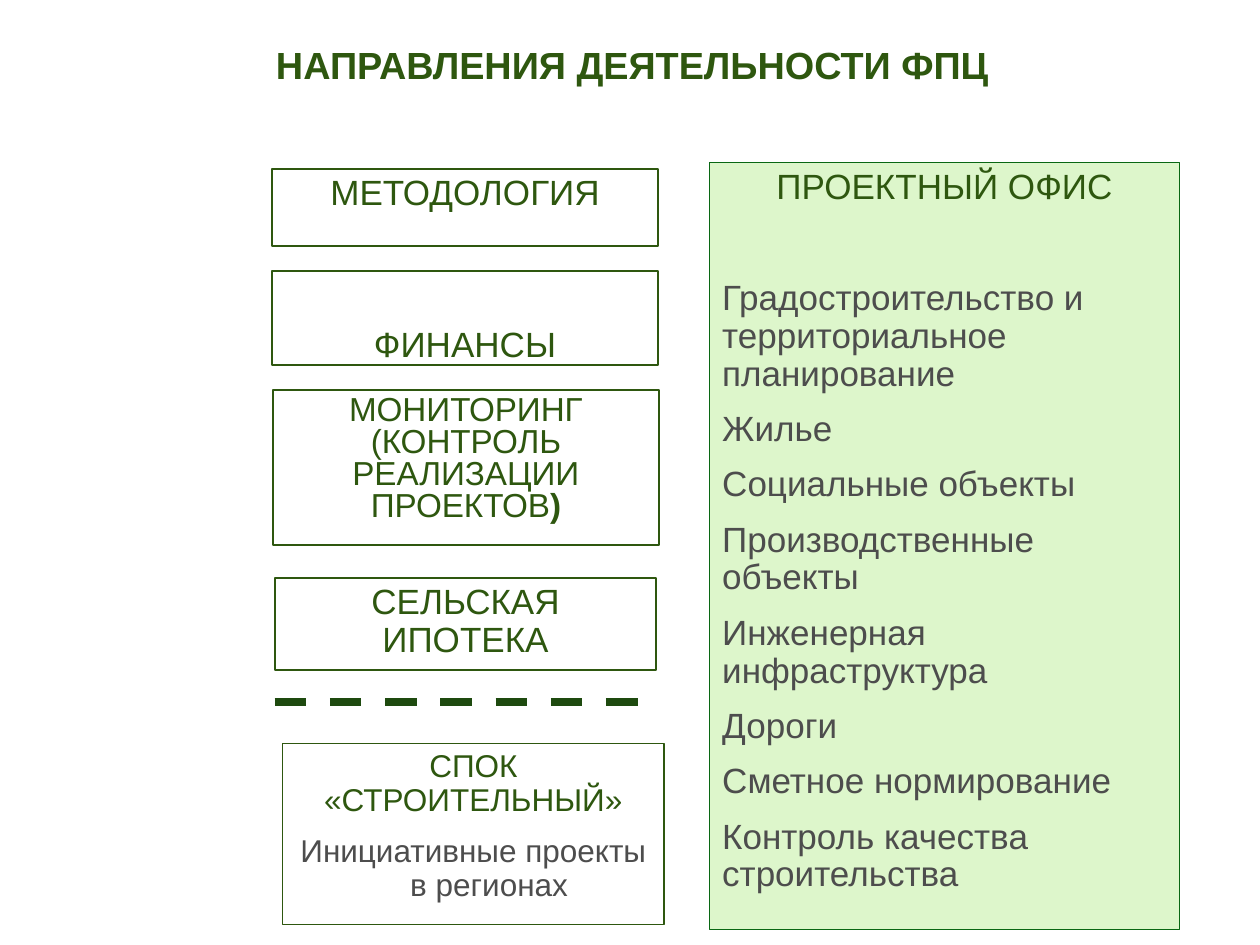
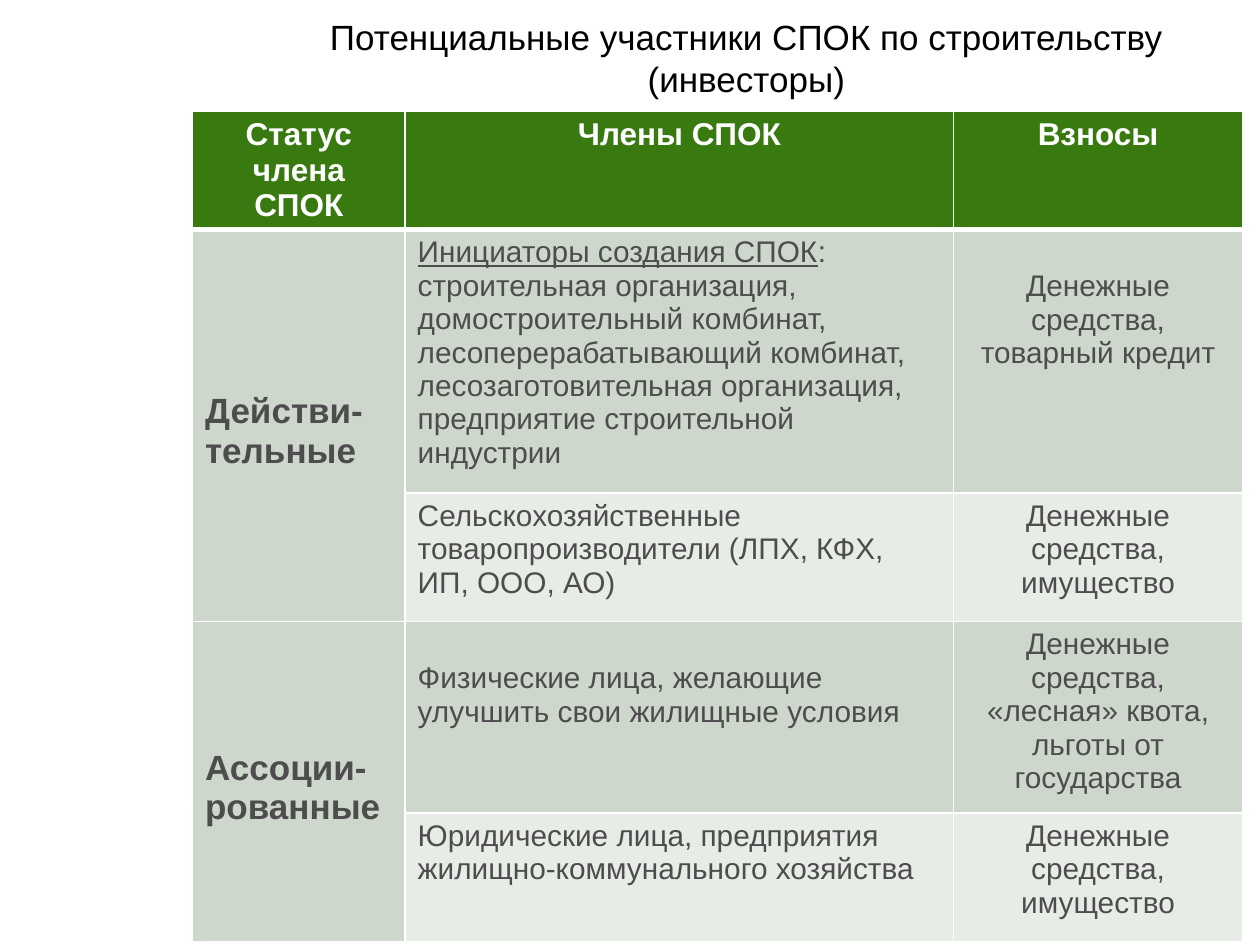
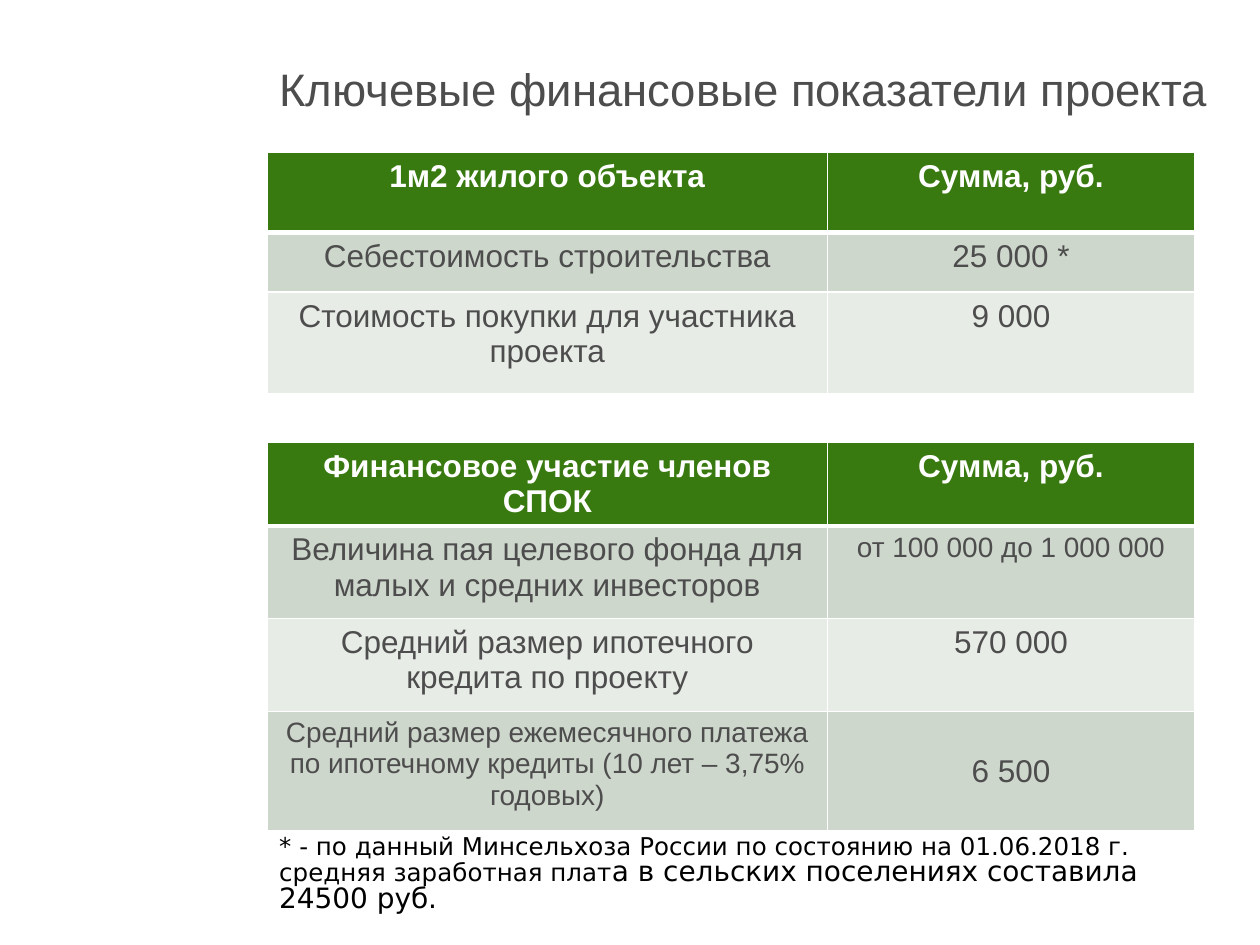
from dataclasses import dataclass

from lxml.etree import SubElement
from pptx import Presentation
from pptx.dml.color import RGBColor
from pptx.enum.dml import MSO_LINE
from pptx.enum.shapes import MSO_CONNECTOR, MSO_SHAPE
from pptx.enum.text import MSO_ANCHOR, MSO_AUTO_SIZE, PP_ALIGN
from pptx.oxml.ns import qn
from pptx.util import Pt


@dataclass(frozen=True)
class Theme:
    font: str = "Arial"
    plain: str = "DejaVu Sans"
    green: str = "2E570F"
    dark: str = "1E4A0F"
    edge: str = "096713"
    pale: str = "DDF6CB"
    head: str = "397A10"
    bands: tuple = ("CED7CC", "E8ECE7")
    gray: str = "4D4D4D"
    black: str = "000000"
    white: str = "FFFFFF"
    big: float = 26
    lead: float = 21.6
    body: float = 20
    tight: float = 19
    mid: float = 18
    cell: float = 17
    small: float = 16
    note: float = 14


THEME = Theme()
LEFT, MID = PP_ALIGN.LEFT, PP_ALIGN.CENTER


def paint(fill, color):
    fill.solid()
    fill.fore_color.rgb = RGBColor.from_string(color)


def write(frame, text, size=THEME.body, color=THEME.gray, font=THEME.font,
          bold=False, align=LEFT, lines=None, before=0, hang=0):
    first = frame.paragraphs[0]
    para = frame.add_paragraph() if first.runs else first
    props = para._p.get_or_add_pPr()
    props.set("marL", str(Pt(hang)))
    props.set("indent", str(-Pt(hang)))
    SubElement(props, qn("a:buNone"))
    para.alignment = align
    para.space_before = Pt(before)
    if lines:
        para.line_spacing = lines
    parts = [(text, {})] if isinstance(text, str) else text
    for words, style in parts:
        run = para.add_run()
        run.text = words
        face = run.font
        face.name = font
        face.size = Pt(style.get("size", size))
        face.bold = style.get("bold", bold)
        face.underline = style.get("under")
        face.color.rgb = RGBColor.from_string(color)


class Deck:
    def __init__(self, theme):
        self.theme = theme
        self.show = Presentation()
        self.show.slide_width, self.show.slide_height = Pt(720), Pt(540)
        self.slide = None

    def place(self, shape, area):
        shape.left, shape.top, shape.width, shape.height = map(Pt, area)
        frame = shape.text_frame
        frame.word_wrap = True
        frame.auto_size = MSO_AUTO_SIZE.NONE
        return frame

    def start(self, title, area, layout=5, **fmt):
        self.slide = self.show.slides.add_slide(self.show.slide_layouts[layout])
        frame = self.place(self.slide.shapes.title, area)
        frame.vertical_anchor = MSO_ANCHOR.MIDDLE
        write(frame, title, **fmt)

    def list(self, head, items, area):
        theme = self.theme
        shape = self.slide.placeholders[1]
        frame = self.place(shape, area)
        paint(shape.fill, theme.pale)
        paint(shape.line.fill, theme.edge)
        shape.line.width = Pt(0.75)
        write(frame, head, color=theme.green, align=MID, lines=0.9)
        for row, item in enumerate(items):
            write(frame, item, lines=0.9, before=10 if row else 42)

    def box(self, text, area, fill=THEME.white, width=1, low=False, **fmt):
        theme = self.theme
        shape = self.slide.shapes.add_shape(MSO_SHAPE.RECTANGLE, *map(Pt, area))
        shape.shadow.inherit = False
        if fill:
            paint(shape.fill, fill)
        else:
            shape.fill.background()
        paint(shape.line.fill, theme.green)
        shape.line.width = Pt(width)
        frame = self.place(shape, area)
        frame.vertical_anchor = MSO_ANCHOR.BOTTOM if low else MSO_ANCHOR.TOP
        if low:
            frame.margin_bottom = 0
        write(frame, text, **{"color": theme.green, "align": MID, "lines": 0.9, **fmt})
        return frame

    def dash(self, left, right, top):
        line = self.slide.shapes.add_connector(
            MSO_CONNECTOR.STRAIGHT, Pt(left), Pt(top), Pt(right), Pt(top))
        paint(line.line.fill, self.theme.dark)
        line.line.width = Pt(4.5)
        line.line.dash_style = MSO_LINE.DASH
        SubElement(line._element.spPr, qn("a:effectLst"))

    def note(self, text, area, **fmt):
        box = self.slide.shapes.add_textbox(*map(Pt, area))
        write(self.place(box, area), text, **fmt)

    def edges(self, cell, base):
        props = cell._tc.get_or_add_tcPr()
        for at, side in enumerate(("lnL", "lnR", "lnT", "lnB")):
            width = base if side == "lnB" else 1
            line = SubElement(props, qn("a:" + side), w=str(Pt(width)))
            fill = SubElement(line, qn("a:solidFill"))
            SubElement(fill, qn("a:srgbClr"), val=self.theme.white)
            props.insert(at, line)

    def table(self, left, top, cols, rows, data, styles):
        theme = self.theme
        grid = self.slide.shapes.add_table(
            len(rows), len(cols), Pt(left), Pt(top), Pt(sum(cols)), Pt(sum(rows))).table
        for col, width in zip(grid.columns, cols):
            col.width = Pt(width)
        for row, height in zip(grid.rows, rows):
            row.height = Pt(height)
        for r, line in enumerate(data):
            for c, item in enumerate(line):
                cell = grid.cell(r, c)
                paint(cell.fill, theme.bands[(r - 1) % 2] if r else theme.head)
                self.edges(cell, 1 if r else 3)
                if item is None:
                    grid.cell(r - 1, c).merge(cell)
                    continue
                text, extra = item if isinstance(item, tuple) else (item, {})
                fmt = {**styles[c], **extra}
                if not r:
                    fmt = dict(size=theme.mid, color=theme.white, bold=True, align=MID)
                cell.margin_top = Pt(fmt.pop("drop", 3.6))
                for words in text if isinstance(text, tuple) else (text,):
                    write(cell.text_frame, words, **fmt)


def work(deck):
    theme = deck.theme
    deck.start("НАПРАВЛЕНИЯ ДЕЯТЕЛЬНОСТИ ФПЦ", (150.5, 20, 544.5, 34), layout=1,
               size=theme.lead, color=theme.green, bold=True)
    deck.box("МЕТОДОЛОГИЯ", (155.5, 96.5, 220.5, 44))
    deck.box("СЕЛЬСКАЯ ИПОТЕКА", (157, 330.5, 218, 52.5))
    deck.box("ФИНАНСЫ", (155.5, 155, 220.5, 53.5), low=True)
    deck.box([("МОНИТОРИНГ (КОНТРОЛЬ РЕАЛИЗАЦИИ ПРОЕКТОВ", {}), (")", {"bold": True})],
             (156, 223, 220.5, 88.5), size=theme.tight, lines=0.8)
    deck.list("ПРОЕКТНЫЙ ОФИС", (
        "Градостроительство и территориальное планирование",
        "Жилье",
        "Социальные объекты",
        "Производственные объекты",
        "Инженерная инфраструктура",
        "Дороги",
        "Сметное нормирование",
        "Контроль качества строительства",
    ), (405.5, 93, 268.5, 438))
    frame = deck.box("СПОК «СТРОИТЕЛЬНЫЙ»", (161.5, 425, 218, 103.5),
                     fill=None, width=0.75, size=theme.mid)
    write(frame, "Инициативные проекты в регионах", size=theme.mid,
          align=MID, lines=0.9, before=10, hang=18)
    deck.dash(157, 375, 401)


def members(deck):
    theme = deck.theme
    deck.start("Потенциальные участники СПОК по строительству (инвесторы)",
               (133, 0, 587, 65.5), color=theme.black, align=MID)
    makers = [
        ("Инициаторы создания СПОК", {"under": True}),
        (": строительная организация, домостроительный комбинат, "
         "лесоперерабатывающий комбинат, лесозаготовительная организация, "
         "предприятие строительной индустрии", {}),
    ]
    goods = "Денежные средства, имущество"
    data = (
        ("Статус члена СПОК", "Члены СПОК", "Взносы"),
        ((("Действи-", "тельные"), {"drop": 93}), makers,
         ("Денежные средства, товарный кредит", {"drop": 23})),
        (None, "Сельскохозяйственные товаропроизводители (ЛПХ, КФХ, ИП, ООО, АО)", goods),
        (("Ассоции-рованные", {"drop": 72.5}),
         ("Физические лица, желающие улучшить свои жилищные условия", {"drop": 23}),
         "Денежные средства, «лесная» квота, льготы от государства"),
        (None, "Юридические лица, предприятия жилищно-коммунального хозяйства", goods),
    )
    styles = ({"bold": True}, {"size": theme.cell}, {"size": theme.cell, "align": MID})
    deck.table(110, 63.5, (121.5, 313.5, 165), (50.5, 150.5, 73.5, 109.5, 73.5),
               data, styles)


def money(deck):
    theme = deck.theme
    left, cols = 152.5, (320.5, 209.5)
    styles = ({"size": theme.mid, "align": MID},) * 2
    small = {"size": theme.small}
    total = "Сумма, руб."
    deck.start("Ключевые финансовые показатели проекта", (left, 18, 553, 65),
               size=theme.big)
    deck.table(left, 87, cols, (46, 34, 58), (
        ("1м2 жилого объекта", total),
        ("Себестоимость строительства", "25 000 *"),
        ("Стоимость покупки для участника проекта", "9 000"),
    ), styles)
    deck.note([
        ("* - по данный Минсельхоза России по состоянию на 01.06.2018 г. "
         "средняя заработная плат", {}),
        ("а в сельских поселениях составила 24500 руб.", small),
    ], (left, 474.5, 553.5, 57), size=theme.note, color=theme.black,
        font=theme.plain, lines=0.8)
    deck.table(left, 253, cols, (42, 53, 53, 68.5), (
        ("Финансовое участие членов СПОК", total),
        ("Величина пая целевого фонда для малых и средних инвесторов",
         ("от 100 000 до 1 000 000", small)),
        ("Средний размер ипотечного кредита по проекту", "570 000"),
        (("Средний размер ежемесячного платежа по ипотечному кредиты "
          "(10 лет – 3,75% годовых)", small), ("6 500", {"drop": 24.5})),
    ), styles)


def main():
    deck = Deck(THEME)
    for build in (work, members, money):
        build(deck)
    deck.show.save("out.pptx")


if __name__ == "__main__":
    main()
